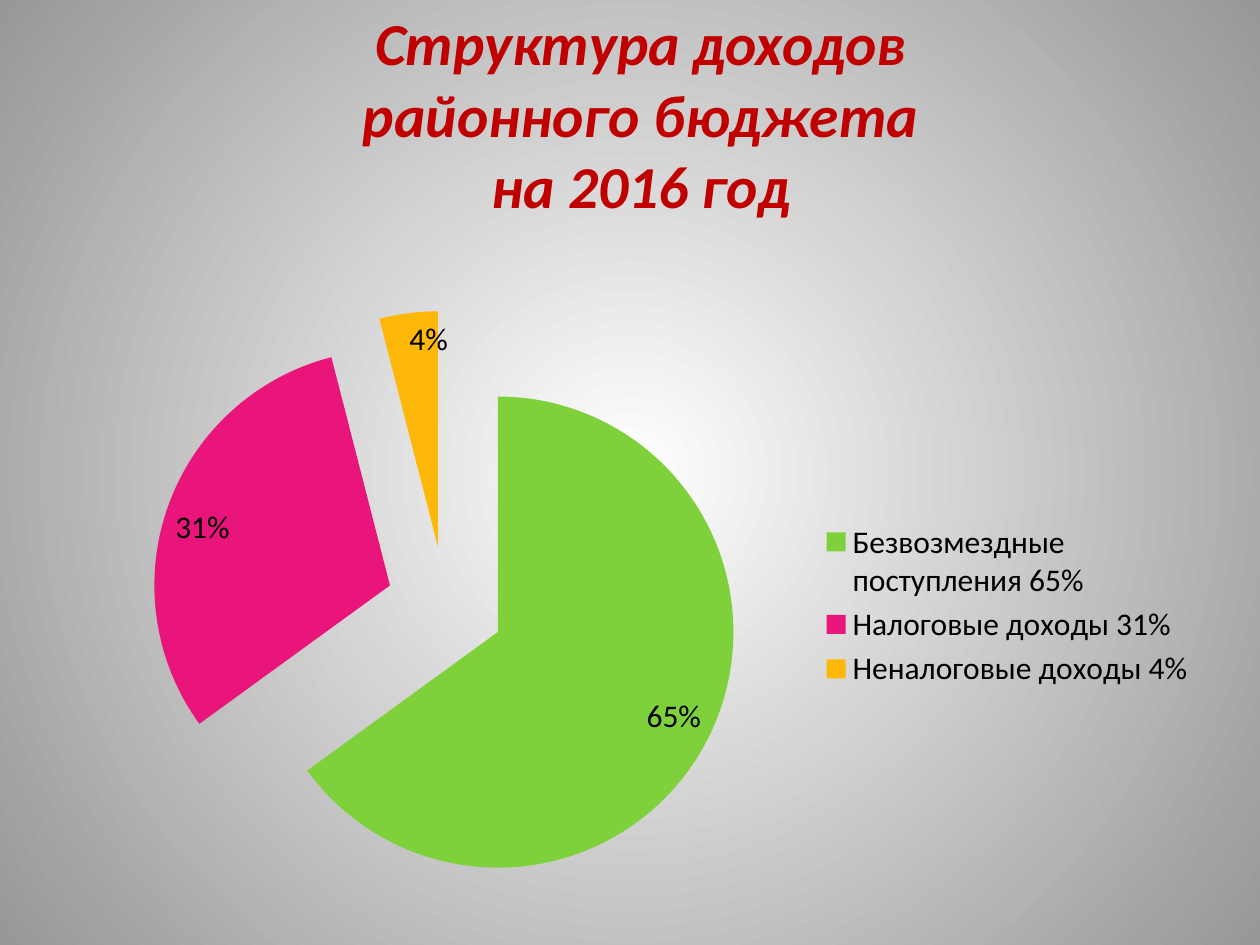
from lxml.etree import SubElement
from pptx import Presentation
from pptx.chart.data import CategoryChartData
from pptx.dml.color import RGBColor
from pptx.enum.chart import XL_CHART_TYPE, XL_LABEL_POSITION, XL_LEGEND_POSITION
from pptx.enum.text import MSO_ANCHOR, PP_ALIGN
from pptx.oxml.ns import qn
from pptx.util import Inches, Pt

# Content
TITLE = "Структура доходов\vрайонного бюджета\vна 2016 год"
INCOME = [
    ("Безвозмездные поступления 65%", 0.65, "7FD13B"),
    ("Налоговые доходы 31%", 0.31, "EA157A"),
    ("Неналоговые доходы 4%", 0.04, "FEB80A"),
]
BACKGROUND = ["FFFFFF", "979797"]  # centre, edge
FONT = "Calibri"
EXPLOSION = 25


def style_font(font, size, color, bold=False, italic=False):
    font.name, font.size = FONT, Pt(size)
    font.bold, font.italic = bold, italic
    font.color.rgb = RGBColor.from_string(color)


prs = Presentation()
prs.slide_width, prs.slide_height = Inches(10), Inches(7.5)
s = prs.slides.add_slide(prs.slide_layouts[5])

# Radial background
fill = s.background.fill
fill.gradient()
for i, (stop, color) in enumerate(zip(fill.gradient_stops, BACKGROUND)):
    stop.position = i
    stop.color.rgb = RGBColor.from_string(color)
grad = next(s.element.iter(qn("a:gradFill")))
grad.remove(grad.find(qn("a:lin")))
circle = SubElement(grad, qn("a:path"), path="circle")
SubElement(circle, qn("a:fillToRect"), {side: "50000" for side in "ltrb"})

# Title
title = s.shapes.title
title.left, title.top = Inches(0.59), Inches(0)
title.width, title.height = Inches(8.99), Inches(1.8)
tf = title.text_frame
tf.text = TITLE
tf.vertical_anchor = MSO_ANCHOR.MIDDLE
p = tf.paragraphs[0]
p.alignment = PP_ALIGN.CENTER
for r in p.runs:
    style_font(r.font, 34, "C00000", bold=True, italic=True)

# Pie chart
data = CategoryChartData(number_format="0%")
data.categories = [name for name, _, _ in INCOME]
data.add_series("Доходы", [share for _, share, _ in INCOME])
chart = s.shapes.add_chart(XL_CHART_TYPE.PIE, Inches(0.59), Inches(2.33),
                           Inches(9), Inches(4.95), data).chart
chart.has_title = False
style_font(chart.font, 18, "000000")
chart.has_legend = True
chart.legend.position = XL_LEGEND_POSITION.RIGHT
chart.legend.include_in_layout = False

plot = chart.plots[0]
plot.vary_by_categories = True
plot.has_data_labels = True
labels = plot.data_labels
labels.show_value = True
labels.show_percentage = False
labels.number_format, labels.number_format_is_linked = "0%", False
labels.position = XL_LABEL_POSITION.INSIDE_END

# Slices: colours and gap from the centre
series = plot.series[0]
for i, (_, _, color) in enumerate(INCOME):
    slice_fill = series.points[i].format.fill
    slice_fill.solid()
    slice_fill.fore_color.rgb = RGBColor.from_string(color)
explosion = SubElement(series.format.element if hasattr(series.format, "element")
                       else plot.series[0]._element, qn("c:explosion"))
explosion.set("val", str(EXPLOSION))
first_point = next(chart.element.iter(qn("c:dPt"))) if hasattr(chart, "element") \
    else explosion.getparent().find(qn("c:dPt"))
first_point.addprevious(explosion)

prs.save("out.pptx")
